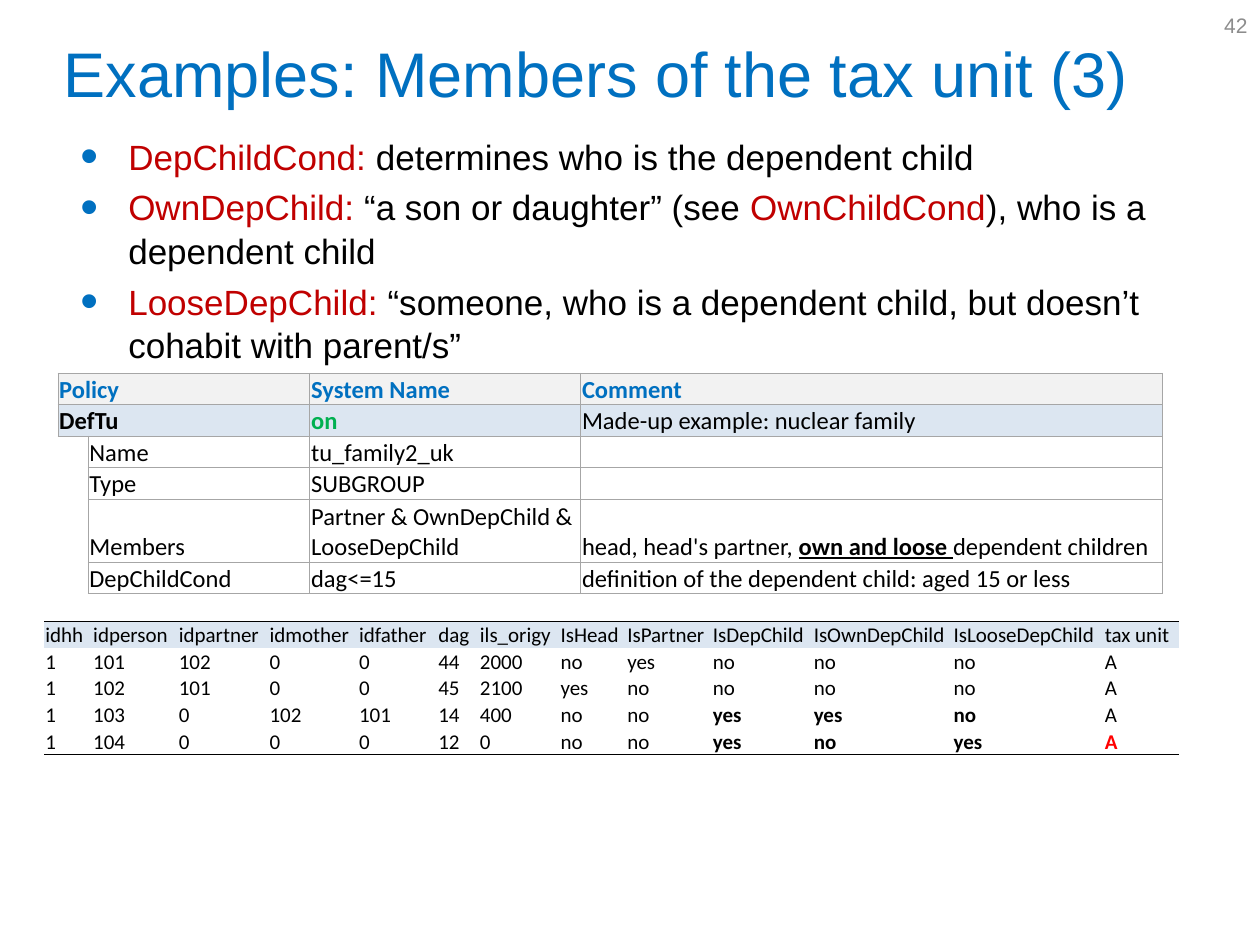
from dataclasses import dataclass

from lxml import etree
from pptx import Presentation
from pptx.dml.color import RGBColor
from pptx.enum.text import MSO_ANCHOR, PP_ALIGN
from pptx.oxml.ns import qn
from pptx.util import Inches, Pt

MIDDLE, BOTTOM = MSO_ANCHOR.MIDDLE, MSO_ANCHOR.BOTTOM
CENTER, RIGHT = PP_ALIGN.CENTER, PP_ALIGN.RIGHT
NO_STYLE = "{2D5ABB26-0587-4C30-8999-92F81FD0307C}"
WIDTH, HEIGHT = Inches(10), Inches(7.5)


@dataclass(frozen=True)
class Theme:
    """Colours, fonts and type sizes of the slide."""
    blue: str = "0070C0"
    red: str = "C00000"
    bright_red: str = "FF0000"
    green: str = "00B050"
    black: str = "000000"
    white: str = "FFFFFF"
    number: str = "8C8C8C"
    grid: str = "A6A6A6"
    head: str = "F2F2F2"
    band: str = "DCE6F1"
    text_font: str = "Arial"
    table_font: str = "Calibri"
    title_size: int = 36
    body_size: int = 20
    policy_size: int = 14
    person_size: int = 12


T = Theme()
BOLD = {"bold": True}
TERM = {"color": T.red}

BULLETS = [
    [("DepChildCond: ", TERM), "determines who is the dependent child"],
    [("OwnDepChild:", TERM), " “a son or daughter” (see ", ("OwnChildCond", TERM),
     "), who is a dependent child"],
    [("LooseDepChild:", TERM),
     " “someone, who is a dependent child, but doesn’t cohabit with parent/s”"],
]

POLICY_COLS = [2.4, 17.6, 21.5, 46.2]
POLICY_ROWS = [3.33, 3.33, 3.33, 3.33, 6.67, 3.33]
HEADING = {"bold": True, "color": T.blue}
POLICY = [
    [[("Policy", HEADING)], "", [("System Name", HEADING)], [("Comment", HEADING)]],
    [[("DefTu", BOLD)], "", [("on", {"bold": True, "color": T.green})],
     "Made-up example: nuclear family"],
    ["", "Name", "tu_family2_uk", ""],
    ["", "Type", "SUBGROUP", ""],
    ["", "Members", "Partner & OwnDepChild & LooseDepChild",
     ["head, head's partner, ", ("own and loose ", {"bold": True, "underline": True}),
      "dependent children"]],
    ["", "DepChildCond", "dag<=15", "definition of the dependent child: aged 15 or less"],
]

PERSON_COLS = [3.8, 6.8, 7.2, 7.1, 6.3, 3.3, 6.4, 5.3, 6.8, 8, 11.1, 12, 6]
PERSON_ROWS = [2.83] * 5
YES, NO = [("yes", BOLD)], [("no", BOLD)]
PERSONS = [
    ["idhh", "idperson", "idpartner", "idmother", "idfather", "dag", "ils_origy", "IsHead",
     "IsPartner", "IsDepChild", "IsOwnDepChild", "IsLooseDepChild", "tax unit"],
    ["1", "101", "102", "0", "0", "44", "2000", "no", "yes", "no", "no", "no", "A"],
    ["1", "102", "101", "0", "0", "45", "2100", "yes", "no", "no", "no", "no", "A"],
    ["1", "103", "0", "102", "101", "14", "400", "no", "no", YES, YES, NO, "A"],
    ["1", "104", "0", "0", "0", "12", "0", "no", "no", YES, NO, YES,
     [("A", {"bold": True, "color": T.bright_red})]],
]


def across(share):
    """Turn a percentage of the slide's width into a length."""
    return int(WIDTH * share / 100)


def down(share):
    """Turn a percentage of the slide's height into a length."""
    return int(HEIGHT * share / 100)


def box(x, y, w, h):
    """Turn percentages of the slide into left, top, width and height."""
    return across(x), down(y), across(w), down(h)


def set_all(obj, values):
    """Set each named attribute of an object."""
    for name, value in values.items():
        setattr(obj, name, value)


def add_runs(p, content, base):
    """Write plain or formatted runs into a paragraph."""
    for part in [content] if isinstance(content, str) else content:
        text, extra = (part, {}) if isinstance(part, str) else part
        fmt = {**base, **extra}
        r = p.add_run()
        r.text = text
        r.font.color.rgb = RGBColor.from_string(fmt.pop("color"))
        set_all(r.font, fmt)


def font(size, color=T.black, name=T.text_font):
    """Return the format values of a run."""
    return {"size": Pt(size), "name": name, "color": color}


def add_bullet(p):
    """Give a paragraph a hanging round bullet."""
    pPr = p._p.get_or_add_pPr()
    indent = Inches(0.38)
    pPr.set("marL", str(indent))
    pPr.set("indent", str(-indent))
    color = etree.SubElement(pPr, qn("a:buClr"))
    etree.SubElement(color, qn("a:srgbClr"), val=T.blue)
    etree.SubElement(pPr, qn("a:buSzPct"), val="145000")
    etree.SubElement(pPr, qn("a:buFont"), typeface=T.text_font)
    etree.SubElement(pPr, qn("a:buChar"), char="•")


def add_title(slide, text):
    """Move and fill the title placeholder."""
    sp = slide.shapes.title
    set_all(sp, dict(zip(("left", "top", "width", "height"), box(2.3, 1.87, 90, 11.6))))
    set_all(sp.text_frame, {"vertical_anchor": MIDDLE, "word_wrap": True})
    p = sp.text_frame.paragraphs[0]
    p.alignment = CENTER
    add_runs(p, text, font(T.title_size, T.blue))


def add_number(slide, text):
    """Add the page number in the top right corner."""
    tf = slide.shapes.add_textbox(*box(76.7, 0, 23.3, 5.33)).text_frame
    set_all(tf, {"vertical_anchor": MIDDLE, "word_wrap": True})
    p = tf.paragraphs[0]
    p.alignment = RIGHT
    add_runs(p, text, font(T.person_size, T.number))


def add_bullets(slide, items):
    """Add the bulleted definitions."""
    tf = slide.shapes.add_textbox(*box(5.4, 13.47, 88.3, 75.33)).text_frame
    tf.word_wrap = True
    for i, item in enumerate(items):
        p = tf.add_paragraph() if i else tf.paragraphs[0]
        p.line_spacing = 1.04
        p.space_before = Pt(4 if i else 0)
        add_bullet(p)
        add_runs(p, item, font(T.body_size))


def format_cell(cell, content, base, fill, anchor, sides, color):
    """Fill a cell with text, colour and half-point borders."""
    inset = Inches(0.01)
    set_all(cell, {"margin_left": inset, "margin_right": inset, "margin_top": inset,
                   "margin_bottom": 0, "vertical_anchor": anchor})
    tcPr = cell._tc.get_or_add_tcPr()
    for side in "LRTB":
        ln = etree.SubElement(tcPr, qn(f"a:ln{side}"), w=str(Pt(0.5)))
        if side in sides:
            paint = etree.SubElement(ln, qn("a:solidFill"))
            etree.SubElement(paint, qn("a:srgbClr"), val=color)
        else:
            etree.SubElement(ln, qn("a:noFill"))
    cell.fill.solid()
    cell.fill.fore_color.rgb = RGBColor.from_string(fill)
    p = cell.text_frame.paragraphs[0]
    if content:
        add_runs(p, content, base)
    else:
        etree.SubElement(p._p, qn("a:endParaRPr"), sz=str(int(base["size"].pt * 100)))


def add_grid(slide, x, y, cols, rows, data, size, line, look):
    """Add a table whose look(row, col) gives fill, anchor and bordered sides."""
    place = box(x, y, sum(cols), sum(rows))
    frame = slide.shapes.add_table(len(rows), len(cols), *place)
    table = frame.table
    set_all(table, {"first_row": False, "horz_banding": False})
    table._tbl.tblPr.find(qn("a:tableStyleId")).text = NO_STYLE
    for col, share in zip(table.columns, cols):
        col.width = across(share)
    for row, share in zip(table.rows, rows):
        row.height = down(share)
    base = font(size, name=T.table_font)
    for i, record in enumerate(data):
        for j, content in enumerate(record):
            format_cell(table.cell(i, j), content, base, *look(i, j), line)
    return table


def policy_look(i, j):
    """Return fill, anchor and borders of a policy cell."""
    if i < 2:
        return (T.head, T.band)[i], MIDDLE, "LRTB"
    sides = "LRTB" if j else "RT" if i == 2 else "R"
    return T.white, BOTTOM, sides


def person_look(i, j):
    """Return fill, anchor and borders of a person cell."""
    sides = {0: "T", len(PERSONS) - 1: "B"}.get(i, "")
    return (T.white if i else T.band), BOTTOM, sides


def main():
    """Build and save the slide."""
    prs = Presentation()
    set_all(prs, {"slide_width": WIDTH, "slide_height": HEIGHT})
    slide = prs.slides.add_slide(prs.slide_layouts[5])
    add_number(slide, "42")
    add_title(slide, "Examples: Members of the tax unit (3)")
    add_bullets(slide, BULLETS)
    policy = add_grid(slide, 4.6, 39.5, POLICY_COLS, POLICY_ROWS, POLICY,
                      T.policy_size, T.grid, policy_look)
    for i in range(2):
        policy.cell(i, 0).merge(policy.cell(i, 1))
    add_grid(slide, 3.5, 65.73, PERSON_COLS, PERSON_ROWS, PERSONS,
             T.person_size, T.black, person_look)
    prs.save("out.pptx")


if __name__ == "__main__":
    main()
